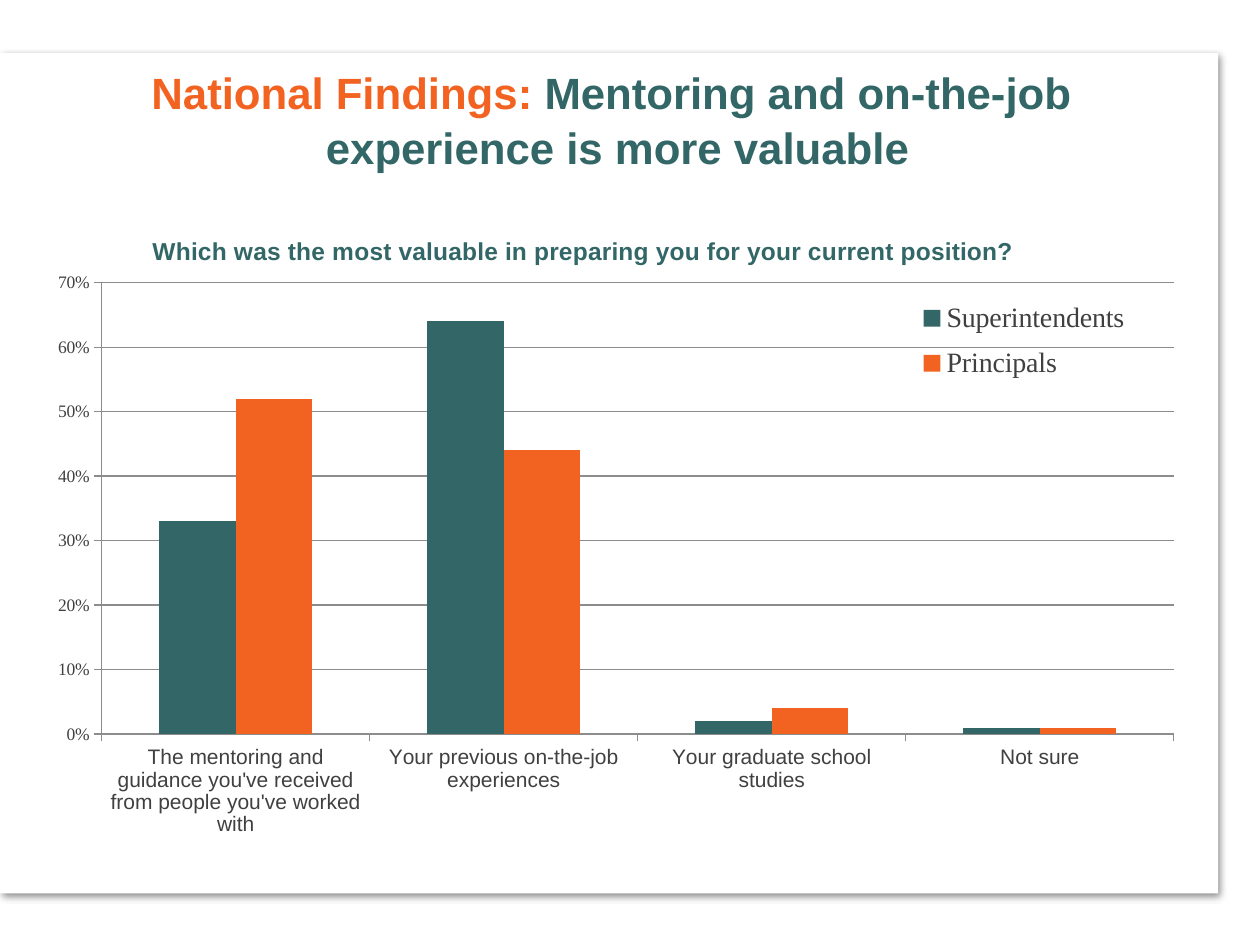
import pptx
import pptx.chart.data
import pptx.dml.color
import pptx.enum.chart
import pptx.enum.shapes
import pptx.enum.text
import pptx.oxml
import pptx.oxml.ns
import pptx.util

Cm = pptx.util.Cm
Pt = pptx.util.Pt
HUES = {"teal": "336666", "orange": "F26322", "text": "404040",
        "grid": "8C8C8C", "white": "FFFFFF"}


def style(font, face, size, hue, bold=False):
    font.name, font.size, font.bold = face, Pt(size), bold
    font.color.rgb = pptx.dml.color.RGBColor.from_string(HUES[hue])


def layout(x, y, w=None, h=None, inner=False):
    """Manual chart layout, in fractions of the chart frame."""
    tags = '<c:layoutTarget val="inner"/>' if inner else ""
    tags += '<c:xMode val="edge"/><c:yMode val="edge"/>'
    for key, val in zip("xywh", (x, y, w, h)):
        if val is not None:
            tags += f'<c:{key} val="{val}"/>'
    return pptx.oxml.parse_xml(
        f'<c:layout {pptx.oxml.ns.nsdecls("c")}>'
        f"<c:manualLayout>{tags}</c:manualLayout></c:layout>")


deck = pptx.Presentation()
deck.slide_width, deck.slide_height = Cm(25.4), Cm(19.05)
slide = deck.slides.add_slide(deck.slide_layouts[6])

# White panel with a soft shadow
panel = slide.shapes.add_shape(pptx.enum.shapes.MSO_SHAPE.RECTANGLE,
                               Cm(0), Cm(1.07), Cm(24.56), Cm(16.94))
panel.fill.solid()
panel.fill.fore_color.rgb = pptx.dml.color.RGBColor.from_string(HUES["white"])
panel.line.fill.background()
panel.shadow.inherit = False
panel._element.spPr.remove(panel._element.spPr.find(pptx.oxml.ns.qn("a:effectLst")))
panel._element.spPr.append(pptx.oxml.parse_xml(
    f'<a:effectLst {pptx.oxml.ns.nsdecls("a")}>'
    f'<a:outerShdw blurRad="{Pt(4)}" dist="{Pt(3)}" dir="2700000" algn="tl" rotWithShape="0">'
    '<a:srgbClr val="000000"><a:alpha val="43000"/></a:srgbClr>'
    '</a:outerShdw></a:effectLst>'))

# Headline
head = slide.shapes.add_textbox(Cm(0.28), Cm(1.07), Cm(24.33), Cm(2.62))
frame = head.text_frame
frame.word_wrap = True
frame.vertical_anchor = pptx.enum.text.MSO_ANCHOR.MIDDLE
para = frame.paragraphs[0]
para.text = "National Findings: Mentoring and on-the-job \vexperience is more valuable"
para.alignment = pptx.enum.text.PP_ALIGN.CENTER
para.line_spacing = 1.05
lead, rest = para.runs
lead.text = "National Findings: "
# The teal part starts on the first line, before the break
mid = para.add_run()
mid.text = "Mentoring and on-the-job "
lead._r.addnext(mid._r)
for run, hue in ((lead, "orange"), (mid, "teal"), (rest, "teal")):
    style(run.font, "Arial", 25, hue, True)

# Chart
data = pptx.chart.data.CategoryChartData(number_format="0%")
data.categories = ["The mentoring and guidance you've received from people you've worked with",
                   "Your previous on-the-job experiences",
                   "Your graduate school studies", "Not sure"]
data.add_series("Superintendents", (0.33, 0.64, 0.02, 0.01))
data.add_series("Principals", (0.52, 0.44, 0.04, 0.01))
chart = slide.shapes.add_chart(pptx.enum.chart.XL_CHART_TYPE.COLUMN_CLUSTERED,
                               Cm(0.89), Cm(4.27), Cm(23.24), Cm(13), data).chart
style(chart.font, "Calibri", 10, "text")

# Bars
plot = chart.plots[0]
plot.gap_width, plot.overlap = 150, 0
plot.vary_by_categories = False
for bars, hue in zip(plot.series, ("teal", "orange")):
    bars.format.fill.solid()
    bars.format.fill.fore_color.rgb = pptx.dml.color.RGBColor.from_string(HUES[hue])
area = chart._chartSpace.chart.plotArea
for old in area.findall(pptx.oxml.ns.qn("c:layout")):
    area.remove(old)
area.insert(0, layout(0.05, 0.11, 0.93, 0.7, True))

# Axes
cats, vals = chart.category_axis, chart.value_axis
style(cats.tick_labels.font, "Arial", 12, "text")
style(vals.tick_labels.font, "Times New Roman", 10, "text")
vals.minimum_scale, vals.maximum_scale, vals.major_unit = 0, 0.7, 0.1
vals.tick_labels.number_format = "0%"
vals.tick_labels.number_format_is_linked = False
vals.has_major_gridlines = True
for axis in (cats, vals):
    axis.major_tick_mark = pptx.enum.chart.XL_TICK_MARK.OUTSIDE
for part in (cats, vals, vals.major_gridlines):
    part.format.line.width = Pt(0.75)
    part.format.line.color.rgb = pptx.dml.color.RGBColor.from_string(HUES["grid"])

# Chart title
chart.has_title = True
title = chart.chart_title
title.text_frame.text = "Which was the most valuable in preparing you for your current position?"
style(title.text_frame.paragraphs[0].runs[0].font, "Arial", 14, "teal", True)
for old in title._element.findall(pptx.oxml.ns.qn("c:layout")):
    title._element.remove(old)
title._element.find(pptx.oxml.ns.qn("c:tx")).addnext(layout(0.09, 0.03))

# Legend
chart.has_legend = True
key = chart.legend
key.position = pptx.enum.chart.XL_LEGEND_POSITION.RIGHT
key.include_in_layout = False
style(key.font, "Times New Roman", 16, "text")
for old in key._element.findall(pptx.oxml.ns.qn("c:layout")):
    key._element.remove(old)
key._element.find(pptx.oxml.ns.qn("c:legendPos")).addnext(layout(0.75, 0.12, 0.2, 0.16))

deck.save("out.pptx")
